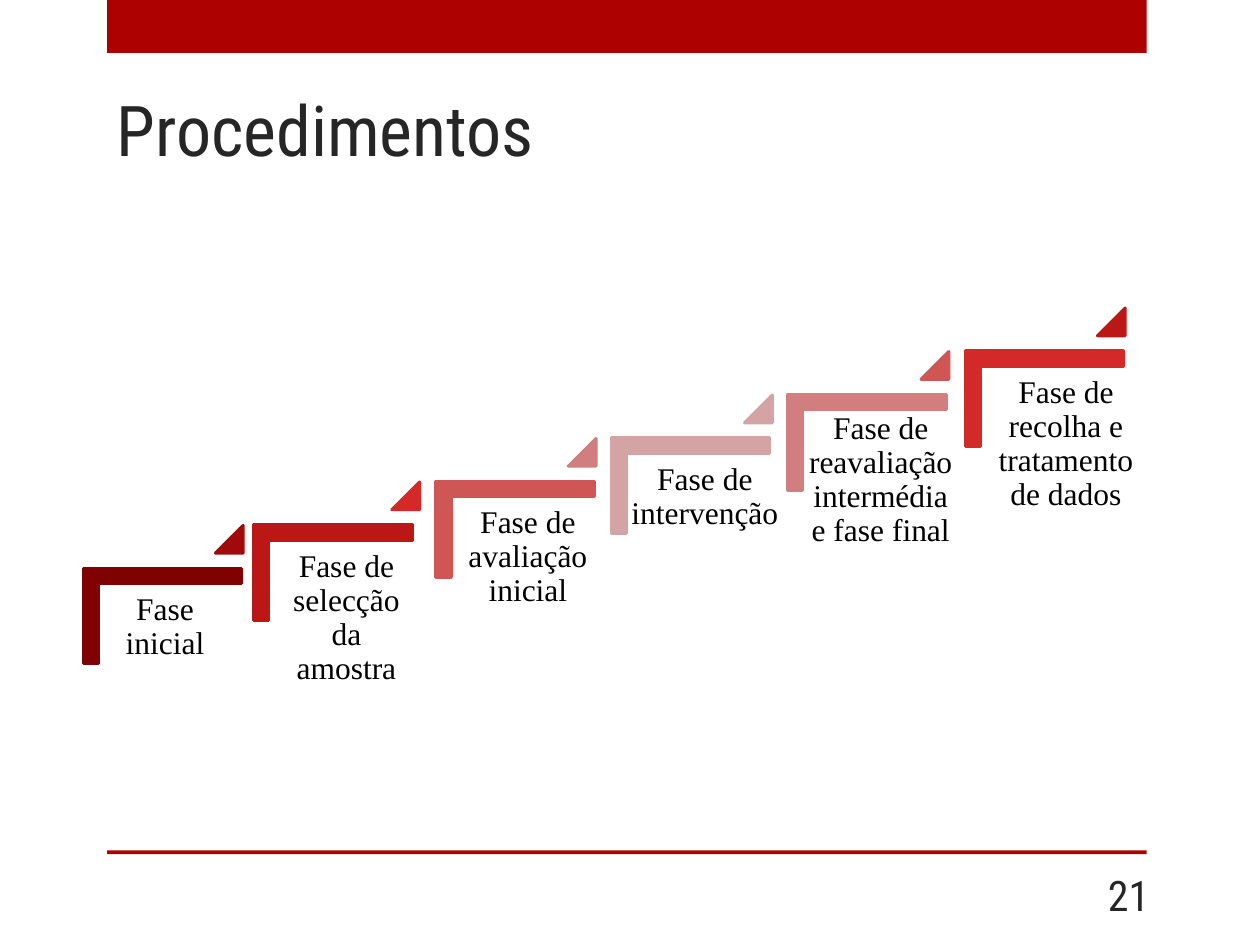
"""Build the "Procedimentos" slide: a staircase of six study phases."""
from dataclasses import dataclass

from lxml import etree
from pptx import Presentation
from pptx.dml.color import RGBColor
from pptx.enum import shapes, text
from pptx.oxml.ns import qn
from pptx.util import Inches, Pt

COLORS = {
    "band": "AD0101", "heading": "262626", "body": "000000",
    "maroon": "800101", "garnet": "A00A0A", "crimson": "BC1717",
    "red": "D32929", "coral": "D05555", "rose": "D07E7E", "blush": "D4A4A4",
}
HEADING_FONT = "Roboto Condensed"
BODY_FONT = "Times New Roman"
FIRST_TOP, RISE = 4.26, 0.345
FIRST_TRIANGLE, PITCH = 1.71, 1.4
CORNER_W, CORNER_H, TRIANGLE = 0.76, 1.26, 0.22


@dataclass
class Phase:
    """One stair: its label, colours and horizontal placement in inches."""
    label: str
    corner_color: str
    triangle_color: str
    corner_left: float
    text_left: float
    text_width: float
    text_drop: float = 0.38


PHASES = [
    Phase("Fase inicial", "maroon", "garnet", 0.91, 0.74, 1.14),
    Phase("Fase de selecção da amostra", "crimson", "red", 2.26, 2.18, 1.14),
    Phase("Fase de avaliação inicial", "coral", "rose", 3.71, 3.62, 1.14),
    Phase("Fase de intervenção", "blush", "blush", 5.1, 4.93, 1.33),
    Phase("Fase de reavaliação intermédia e fase final", "rose", "coral",
          6.5, 6.3, 1.38, 0.32),
    Phase("Fase de recolha e tratamento de dados", "red", "crimson",
          7.91, 7.75, 1.42),
]


def add_shape(s, kind, left: float, top: float, width: float, height: float,
              color: str, line_width: float = 0):
    """Add a solid shape, outlined in its own colour if a width is given."""
    sp = s.shapes.add_shape(kind, Inches(left), Inches(top),
                            Inches(width), Inches(height))
    sp.shadow.inherit = False
    rgb = RGBColor.from_string(COLORS[color])
    sp.fill.solid()
    sp.fill.fore_color.rgb = rgb
    if line_width:
        sp.line.color.rgb = rgb
        sp.line.width = Pt(line_width)
    else:
        sp.line.fill.background()
    return sp


def add_corner(s, left: float, top: float, color: str) -> None:
    """Add a quarter-turned L, a preset that MSO_SHAPE does not list."""
    sp = add_shape(s, shapes.MSO_SHAPE.RECTANGLE, left, top,
                   CORNER_W, CORNER_H, color, 1.75)
    sp.rotation = 90
    geometry = sp.element.spPr.find(qn("a:prstGeom"))
    geometry.set("prst", "corner")
    guides = geometry.find(qn("a:avLst"))
    for name in ("adj1", "adj2"):
        etree.SubElement(guides, qn("a:gd"), name=name, fmla="val 16100")


def add_text(s, words: str, left: float, top: float, width: float,
             height: float, size: float, font: str, color: str, align, anchor):
    """Add a wrapping one-paragraph text box and return its text frame."""
    sp = s.shapes.add_textbox(Inches(left), Inches(top),
                              Inches(width), Inches(height))
    tf = sp.text_frame
    tf.word_wrap = True
    tf.vertical_anchor = anchor
    p = tf.paragraphs[0]
    p.text = words
    p.alignment = align
    p.font.size = Pt(size)
    p.font.name = font
    p.font.color.rgb = RGBColor.from_string(COLORS[color])
    return tf


def add_phase(s, index: int, phase: Phase) -> None:
    """Draw one stair with its label and the triangle above its end."""
    top = FIRST_TOP - index * RISE
    add_corner(s, phase.corner_left, top, phase.corner_color)
    tf = add_text(s, phase.label, phase.text_left, top + phase.text_drop,
                  phase.text_width, 1, 18, BODY_FONT, "body",
                  text.PP_ALIGN.CENTER, text.MSO_ANCHOR.TOP)
    tf.margin_left = tf.margin_right = Inches(0.07)
    tf.margin_top = tf.margin_bottom = Inches(0.07)
    tf.paragraphs[0].line_spacing = 0.9
    triangle = add_shape(s, shapes.MSO_SHAPE.ISOSCELES_TRIANGLE,
                         FIRST_TRIANGLE + index * PITCH, top - 0.09,
                         TRIANGLE, TRIANGLE, phase.triangle_color, 1.75)
    triangle.adjustments[0] = 1


def main() -> None:
    """Build and save the slide."""
    prs = Presentation()
    prs.slide_width, prs.slide_height = Inches(10), Inches(7.5)
    s = prs.slides.add_slide(prs.slide_layouts[6])
    for top, height in ((0, 0.42), (6.75, 0.03)):
        add_shape(s, shapes.MSO_SHAPE.RECTANGLE, 0.85, top, 8.25, height, "band")
    add_text(s, "Procedimentos", 0.83, 0.6, 7.42, 0.8, 40, HEADING_FONT,
             "heading", text.PP_ALIGN.LEFT, text.MSO_ANCHOR.BOTTOM)
    add_text(s, "21", 8.39, 6.9, 0.83, 0.4, 24, HEADING_FONT,
             "heading", text.PP_ALIGN.RIGHT, text.MSO_ANCHOR.MIDDLE)
    for index, phase in enumerate(PHASES):
        add_phase(s, index, phase)
    prs.save("out.pptx")


if __name__ == "__main__":
    main()
